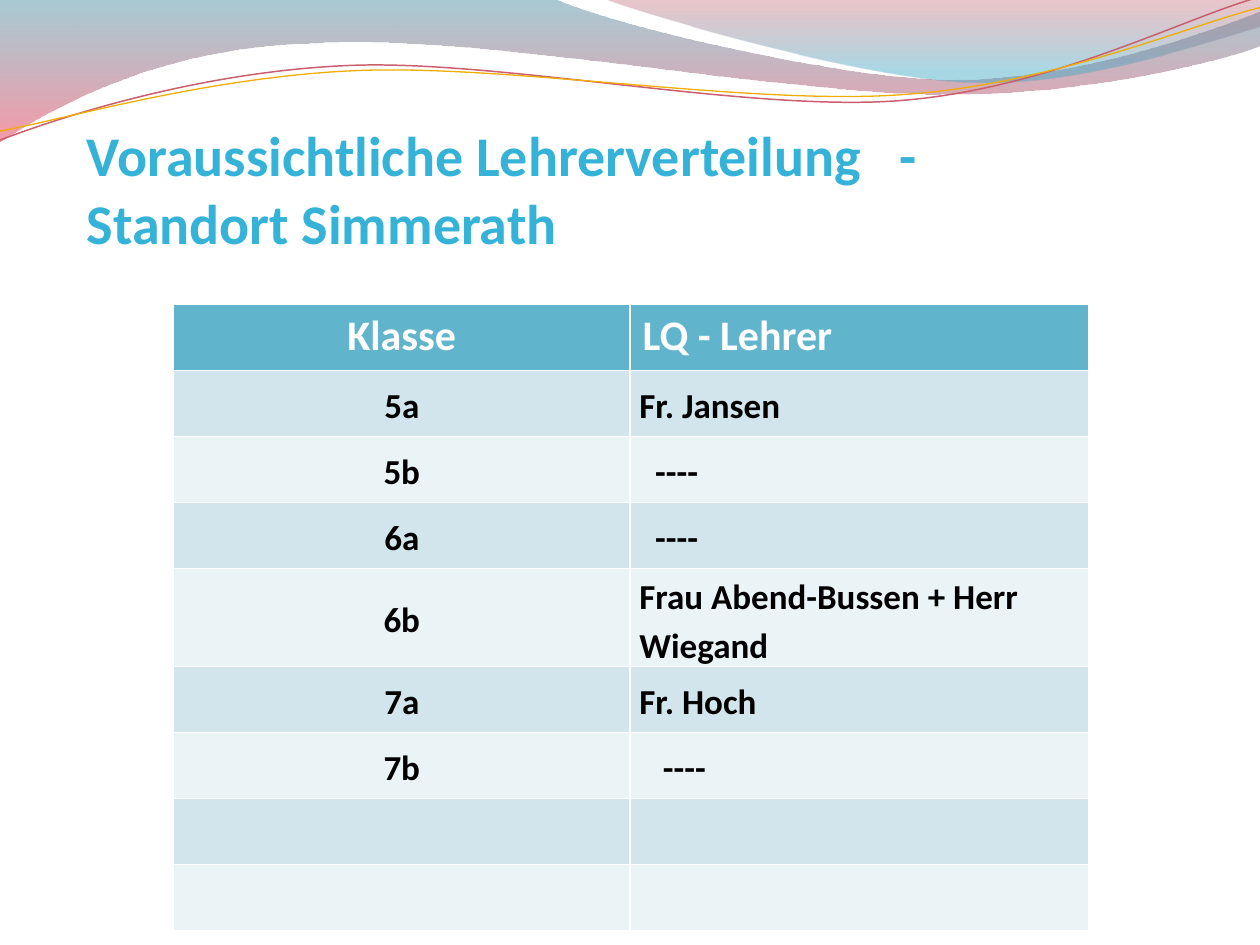
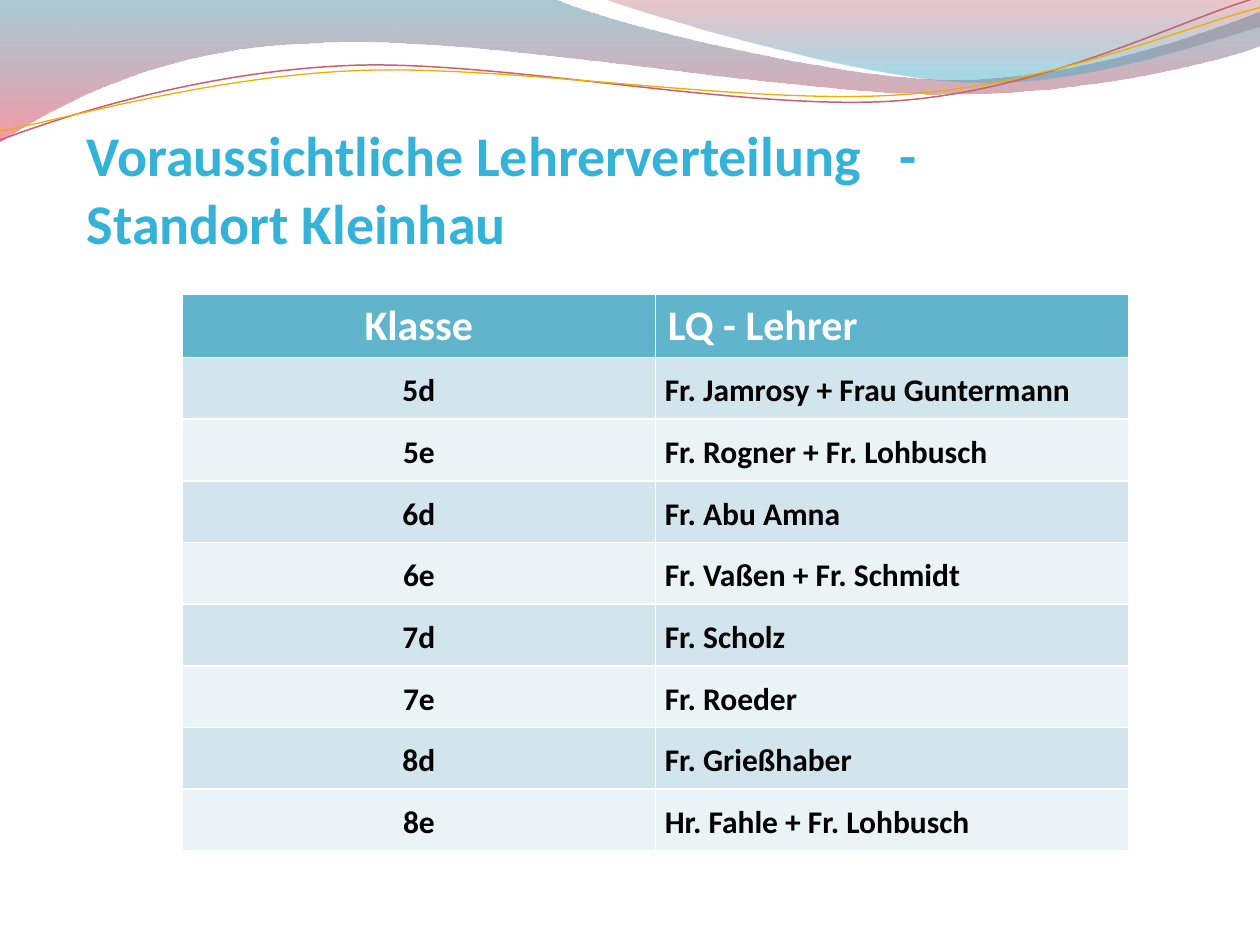
from lxml.etree import SubElement
from pptx import Presentation
from pptx.dml.color import RGBColor
from pptx.enum.text import MSO_ANCHOR, PP_ALIGN
from pptx.oxml.ns import qn
from pptx.util import Pt

FONT = "Calibri"
COLORS = {
    "title": "35B2D7", "header": "60B5CC", "odd": "D2E5EC", "even": "EAF3F6",
    "white": "FFFFFF", "black": "000000",
    "teal": "3F8A9F", "pink": "EF445B", "wine": "B84253", "cyan": "42ABC7",
    "rose": "CB5F6E", "amber": "F0AD00",
}

# Each outline is a start point, then steps: one point is a line, three a curve
BANDS = [
    {"start": (0, 0),
     "steps": [[(316.8, -0.7)],
               [(342.7, 12.2), (478.1, 45.4), (545.8, 45.4)],
               [(614.2, 45.4), (689.8, 18.7), (720, 6.5)],
               [(720.7, 25.9)],
               [(707.8, 31.7), (626.4, 54.7), (537.1, 54)],
               [(447.8, 54), (275, 20.2), (185, 24.5)],
               [(92.9, 25.9), (33.1, 59.8), (-0.7, 81.4)],
               [(0, 0)]],
     "stops": [(0, "teal", 45), (1, "pink", 55)]},
    {"start": (344.9, -0.7),
     "steps": [[(366.5, 7.9), (491, 44.6), (553.7, 46.8)],
               [(616.3, 49.7), (691.9, 23), (720, 15.1)],
               [(720, 0)],
               [(344.9, -0.7)]],
     "stops": [(0, "wine", 30), (0.8, "cyan", 45)]},
    {"start": (-1.4, 63.1),
     "steps": [[(33.7, 51.6), (114, 29.4), (199.8, 29.9)],
               [(284.8, 30.3), (425.8, 67.2), (512.4, 64.8)],
               [(599, 62.4), (676.4, 25.7), (720.2, 15.6)]],
     "line": ("rose", 0.85)},
    {"start": (-1.1, 57.9),
     "steps": [[(32.9, 53.7), (118.3, 32.5), (204, 33)],
               [(290.5, 33.4), (428.9, 63.8), (515.5, 61.4)],
               [(601.4, 59.6), (678.5, 30.1), (721.4, 21.3)]],
     "line": ("amber", 0.75)},
]
LINE_ROTATION = 357.3

SITES = [
    {"name": "Standort Simmerath", "left": 99.25, "top": 174,
     "columns": (260.75, 262), "row_height": 37.75, "size": 20,
     "indents": {"5b": 9, "6a": 9, "7b": 13.5},
     "rows": [("5a", "Fr. Jansen"), ("5b", "----"), ("6a", "----"),
              ("6b", "Frau Abend-Bussen + Herr Wiegand"),
              ("7a", "Fr. Hoch"), ("7b", "----"), ("", ""), ("", "")]},
    {"name": "Standort Kleinhau", "left": 104.25, "top": 168.25,
     "columns": (270.25, 270.25), "row_height": 35.25, "size": 18, "indents": {},
     "rows": [("5d", "Fr. Jamrosy + Frau Guntermann"),
              ("5e", "Fr. Rogner + Fr. Lohbusch"), ("6d", "Fr. Abu Amna"),
              ("6e", "Fr. Vaßen + Fr. Schmidt"), ("7d", "Fr. Scholz"),
              ("7e", "Fr. Roeder"), ("8d", "Fr. Grießhaber"),
              ("8e", "Hr. Fahle + Fr. Lohbusch")]},
]


def color(name):
    return RGBColor.from_string(COLORS[name])


def format_text(paragraph, size, color_name):
    for span in paragraph.runs:
        span.font.name = FONT
        span.font.size = Pt(size)
        span.font.bold = True
        span.font.color.rgb = color(color_name)


deck = Presentation()
deck.slide_width, deck.slide_height = Pt(720), Pt(540)

for site in SITES:
    page = deck.slides.add_slide(deck.slide_layouts[6])

    # Waves and thin curves along the top
    for band in BANDS:
        start_x, start_y = band["start"]
        builder = page.shapes.build_freeform(Pt(start_x), Pt(start_y))
        points = [(Pt(x), Pt(y)) for step in band["steps"] for x, y in step]
        builder.add_line_segments(points, close="stops" in band)
        wave = builder.convert_to_shape()
        wave.shadow.inherit = False

        # Join each group of three segments into one Bezier curve
        segments = list(wave.element.spPr.iter(qn("a:lnTo")))
        for step in band["steps"]:
            group, segments = segments[:len(step)], segments[len(step):]
            if len(group) == 3:
                group[0].tag = qn("a:cubicBezTo")
                for segment in group[1:]:
                    group[0].append(segment[0])
                    segment.getparent().remove(segment)

        if "stops" in band:
            wave.line.fill.background()
            wave.fill.gradient()
            wave.fill.gradient_angle = 270
            for stop, (position, name, opacity) in zip(wave.fill.gradient_stops, band["stops"]):
                stop.position = position
                stop.color.rgb = color(name)
            tints = wave.element.spPr.iter(qn("a:srgbClr"))
            for tint, (position, name, opacity) in zip(tints, band["stops"]):
                SubElement(tint, qn("a:alpha"), val=str(opacity * 1000))
        else:
            name, width = band["line"]
            wave.rotation = LINE_ROTATION
            wave.fill.background()
            wave.line.color.rgb = color(name)
            wave.line.width = Pt(width)

    # Title, with a tab stop that sets the dash apart
    box = page.shapes.add_textbox(Pt(42.5), Pt(65.5), Pt(664), Pt(90))
    box.text_frame.word_wrap = True
    box.text_frame.text = "Voraussichtliche Lehrerverteilung\t-\n" + site["name"]
    for para in box.text_frame.paragraphs:
        format_text(para, 32, "title")
    tabs = SubElement(box.text_frame.paragraphs[0]._p.get_or_add_pPr(), qn("a:tabLst"))
    SubElement(tabs, qn("a:tab"), pos=str(Pt(464.5)), algn="l")

    # Table of classes and teachers; its style draws the white borders
    rows = [("Klasse", "LQ - Lehrer"), *site["rows"]]
    table = page.shapes.add_table(len(rows), 2, Pt(site["left"]), Pt(site["top"]),
                                  Pt(sum(site["columns"])),
                                  Pt(site["row_height"] * len(rows))).table
    for column, width in zip(table.columns, site["columns"]):
        column.width = Pt(width)
    for row_index, row in enumerate(rows):
        table.rows[row_index].height = Pt(site["row_height"])
        is_header = row_index == 0
        for column_index, text in enumerate(row):
            cell = table.cell(row_index, column_index)
            cell.text = text
            para = cell.text_frame.paragraphs[0]
            if column_index == 0:
                para.alignment = PP_ALIGN.CENTER
            if is_header:
                format_text(para, 24, "white")
            elif text:
                format_text(para, site["size"], "black")
                para.line_spacing = 1.15
                cell.vertical_anchor = MSO_ANCHOR.MIDDLE
                indent = site["indents"].get(row[0], 0) if column_index else 0
                cell.margin_left, cell.margin_right = Pt(5.4 + indent), Pt(5.4)
                cell.margin_top = cell.margin_bottom = Pt(0.4)
            cell.fill.solid()
            cell.fill.fore_color.rgb = color(
                "header" if is_header else "odd" if row_index % 2 else "even")

deck.save("out.pptx")
